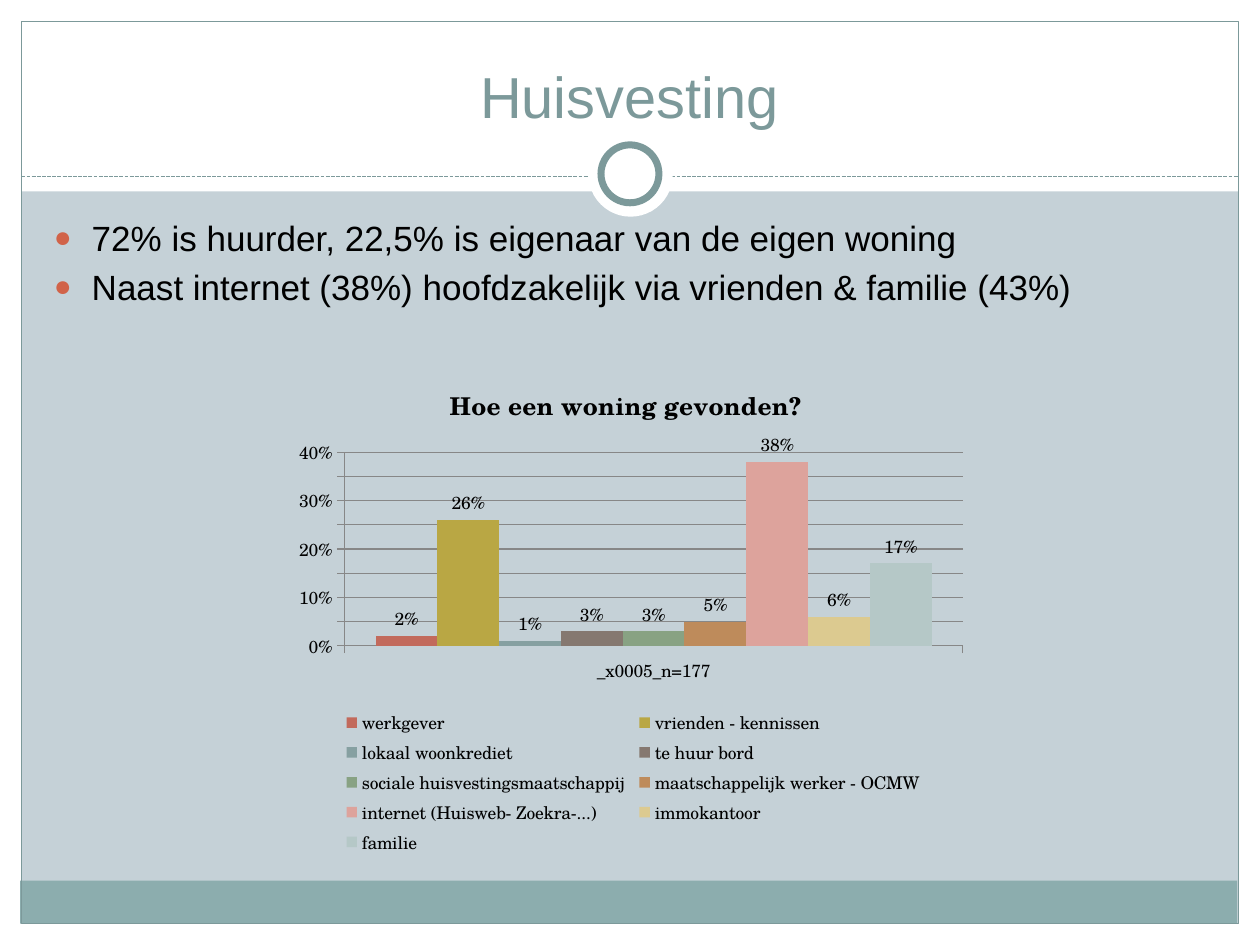
from lxml import etree
from pptx import Presentation
from pptx.chart.data import CategoryChartData
from pptx.dml.color import RGBColor
from pptx.enum.chart import XL_CHART_TYPE, XL_LABEL_POSITION, XL_LEGEND_POSITION, XL_TICK_MARK
from pptx.enum.dml import MSO_LINE
from pptx.enum.shapes import MSO_CONNECTOR, MSO_SHAPE
from pptx.enum.text import MSO_ANCHOR, PP_ALIGN
from pptx.oxml.ns import qn
from pptx.util import Inches, Pt

RECTANGLE, OVAL = MSO_SHAPE.RECTANGLE, MSO_SHAPE.OVAL
STRAIGHT, DASHED = MSO_CONNECTOR.STRAIGHT, MSO_LINE.SQUARE_DOT
CENTER, BOTTOM = PP_ALIGN.CENTER, MSO_ANCHOR.BOTTOM
CLUSTERED = XL_CHART_TYPE.COLUMN_CLUSTERED
LEGEND_BOTTOM, LABEL_ABOVE = XL_LEGEND_POSITION.BOTTOM, XL_LABEL_POSITION.OUTSIDE_END
TICK_OUT = XL_TICK_MARK.OUTSIDE

WHITE, BLACK, SLATE, TEAL, GRID = "FFFFFF", "000000", "7C999A", "8CADAE", "878787"
HOUSING_SOURCES = [
    ("werkgever", 0.02, "C26A5C"),
    ("vrienden - kennissen", 0.26, "B9A744"),
    ("lokaal woonkrediet", 0.01, "86A0A1"),
    ("te huur bord", 0.03, "857870"),
    ("sociale huisvestingsmaatschappij", 0.03, "88A283"),
    ("maatschappelijk werker - OCMW", 0.05, "BE8B5B"),
    ("internet (Huisweb- Zoekra-...)", 0.38, "DDA39C"),
    ("immokantoor", 0.06, "DCCA90"),
    ("familie", 0.17, "B5C8C7"),
]


def color(value):
    return RGBColor.from_string(value)


def box(left, top, width, height):
    return Inches(left), Inches(top), Inches(width), Inches(height)


def set_layout(parent, index, inner, **fractions):
    for old in parent.findall(qn("c:layout")):
        parent.remove(old)
    layout = etree.Element(qn("c:layout"))
    manual = etree.SubElement(layout, qn("c:manualLayout"))
    settings = {"layoutTarget": "inner"} if inner else {}
    settings.update(xMode="edge", yMode="edge", **fractions)
    for name, value in settings.items():
        etree.SubElement(manual, qn(f"c:{name}")).set("val", str(value))
    parent.insert(index, layout)


class SlideBuilder:
    """Holds the style and the current slide, and adds each kind of element."""

    text_font, chart_font = "Arial", "TeX Gyre Schola"

    def __init__(self, presentation, background):
        self.slide = presentation.slides.add_slide(presentation.slide_layouts[5])
        self.slide.background.fill.solid()
        self.slide.background.fill.fore_color.rgb = color(background)

    def style_font(self, font, size, value=BLACK, name=text_font, bold=False):
        font.name, font.size, font.bold = name, Pt(size), bold
        font.color.rgb = color(value)

    def shape(self, kind, position, fill=None, line=None, width=0.75):
        shape = self.slide.shapes.add_shape(kind, *box(*position))
        shape.shadow.inherit = False
        if fill:
            shape.fill.solid()
            shape.fill.fore_color.rgb = color(fill)
        else:
            shape.fill.background()
        if line:
            shape.line.color.rgb = color(line)
            shape.line.width = Pt(width)
        else:
            shape.line.fill.background()

    def dashed_line(self, left, right, top, value):
        connector = self.slide.shapes.add_connector(
            STRAIGHT, Inches(left), Inches(top), Inches(right), Inches(top))
        connector.line.color.rgb = color(value)
        connector.line.width = Pt(0.75)
        connector.line.dash_style = DASHED
        etree.SubElement(connector._element.spPr, qn("a:effectLst"))

    def title(self, position, text, size, value):
        title = self.slide.shapes.title
        title.left, title.top, title.width, title.height = box(*position)
        self.slide.shapes._spTree.append(title._element)
        title.text_frame.vertical_anchor = BOTTOM
        paragraph = title.text_frame.paragraphs[0]
        paragraph.alignment = CENTER
        run = paragraph.add_run()
        run.text = text
        self.style_font(run.font, size, value)

    def bullets(self, position, lines, size, bullet_color):
        frame = self.slide.shapes.add_textbox(*box(*position)).text_frame
        frame.word_wrap = True
        for index, line in enumerate(lines):
            paragraph = frame.add_paragraph() if index else frame.paragraphs[0]
            paragraph.space_before = Pt(size * 0.2)
            run = paragraph.add_run()
            run.text = line
            self.style_font(run.font, size)
            properties = paragraph._p.get_or_add_pPr()
            properties.set("marL", str(Inches(0.3)))
            properties.set("indent", str(-Inches(0.3)))
            bullet = etree.SubElement(properties, qn("a:buClr"))
            etree.SubElement(bullet, qn("a:srgbClr")).set("val", bullet_color)
            etree.SubElement(properties, qn("a:buSzPct")).set("val", "85000")
            etree.SubElement(properties, qn("a:buFont")).set("typeface", self.text_font)
            etree.SubElement(properties, qn("a:buChar")).set("char", "●")

    def column_chart(self, position, title, category, rows):
        data = CategoryChartData(number_format="0%")
        data.categories = [category]
        for name, value, _ in rows:
            data.add_series(name, [value])
        chart = self.slide.shapes.add_chart(CLUSTERED, *box(*position), data).chart
        self.style_font(chart.font, 10, name=self.chart_font)

        chart.has_title = True
        run = chart.chart_title.text_frame.paragraphs[0].add_run()
        run.text = title
        self.style_font(run.font, 14, name=self.chart_font, bold=True)

        plot = chart.plots[0]
        plot.gap_width, plot.overlap, plot.vary_by_categories = 100, 0, False
        for series, (_, _, fill) in zip(plot.series, rows):
            series.format.fill.solid()
            series.format.fill.fore_color.rgb = color(fill)
            labels = series.data_labels
            labels.show_value, labels.position = True, LABEL_ABOVE
            labels.number_format, labels.number_format_is_linked = "0%", False

        value_axis = chart.value_axis
        value_axis.minimum_scale, value_axis.maximum_scale = 0, 0.4
        value_axis.major_unit = 0.05
        value_axis.has_major_gridlines = True
        value_axis.tick_labels.number_format = "0%"
        value_axis.tick_labels.number_format_is_linked = False
        for axis in (value_axis, chart.category_axis):
            axis.major_tick_mark = TICK_OUT
            axis.format.line.color.rgb = color(GRID)
        value_axis.major_gridlines.format.line.color.rgb = color(GRID)

        chart.has_legend = True
        chart.legend.position = LEGEND_BOTTOM
        chart.legend.include_in_layout = False
        set_layout(chart.legend._element, 1, False, x=0.08, y=0.69, w=0.85, h=0.31)
        plot_area = chart._chartSpace.chart.plotArea
        set_layout(plot_area, 0, True, x=0.09, y=0.18, w=0.89, h=0.39)


def main():
    presentation = Presentation()
    presentation.slide_width, presentation.slide_height = Inches(10), Inches(7.5)
    builder = SlideBuilder(presentation, "C5D1D7")

    for margin in ((0, 7.33, 10, 0.17), (0, 0, 10, 1.52),
                   (0, 0, 0.17, 7.5), (9.83, 0, 0.17, 7.5)):
        builder.shape(RECTANGLE, margin, WHITE)
    builder.shape(RECTANGLE, (0.16, 6.99, 9.66, 0.34), TEAL)
    builder.shape(RECTANGLE, (0.17, 0.17, 9.66, 7.16), line=SLATE)
    builder.dashed_line(0.17, 9.83, 1.4, SLATE)
    builder.shape(OVAL, (4.67, 1.05, 0.67, 0.67), WHITE)
    builder.shape(OVAL, (4.77, 1.15, 0.46, 0.46), WHITE, SLATE, 4)

    builder.title((0.33, 0.25, 9.33, 0.83), "Huisvesting", 33, SLATE)
    builder.bullets((0.33, 1.67, 9.3, 5), [
        "72% is huurder, 22,5% is eigenaar van de eigen woning",
        "Naast internet (38%) hoofdzakelijk via vrienden & familie (43%)",
    ], 20, "D16349")
    builder.column_chart((2.24, 2.88, 5.51, 3.94), "Hoe een woning gevonden? ",
                         "_x0005_n=177", HOUSING_SOURCES)
    presentation.save("out.pptx")


if __name__ == "__main__":
    main()
